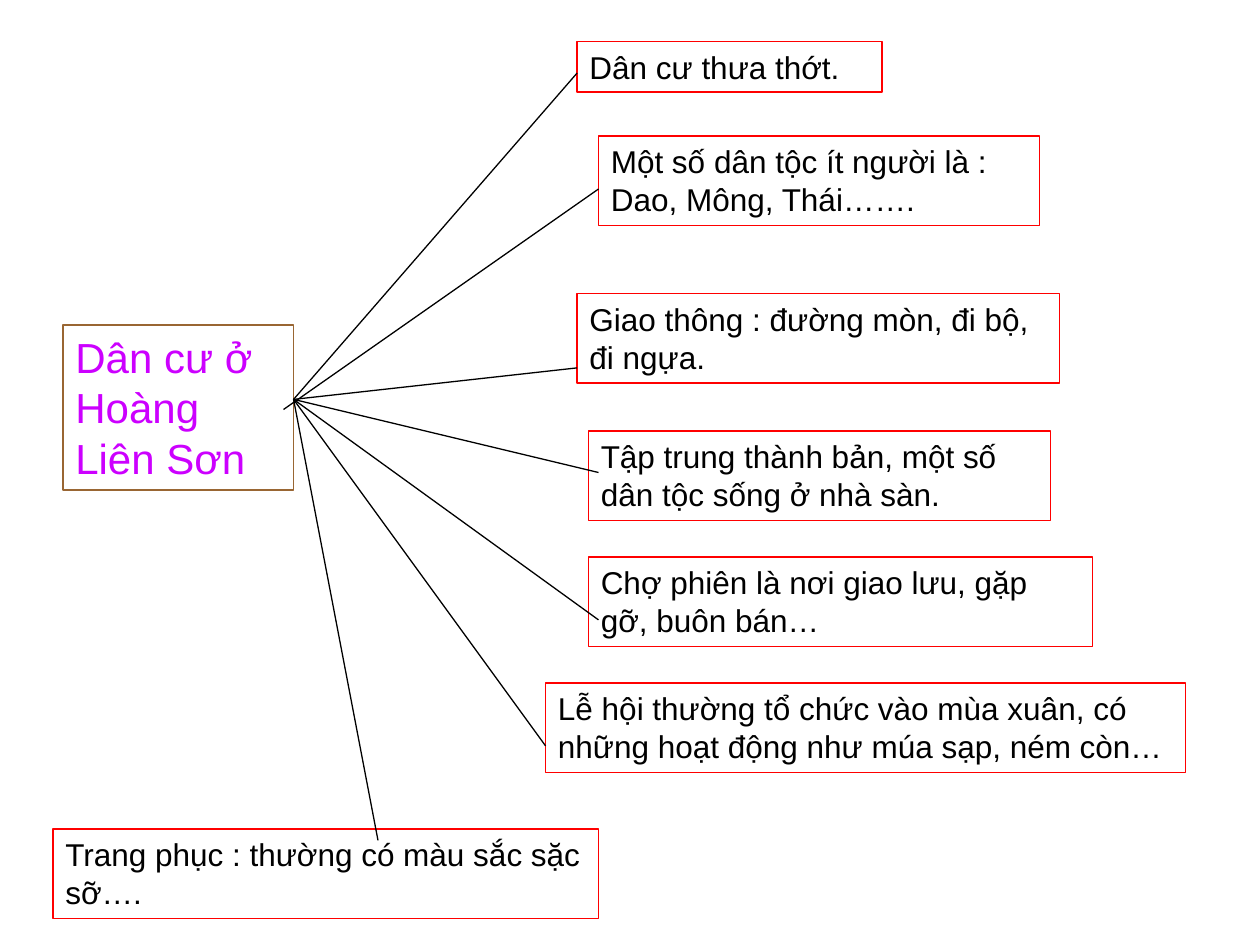
from dataclasses import dataclass

from lxml import etree
from pptx import Presentation
from pptx.dml.color import RGBColor
from pptx.enum.shapes import MSO_CONNECTOR
from pptx.enum.text import MSO_AUTO_SIZE
from pptx.oxml.ns import qn
from pptx.util import Inches, Pt

STRAIGHT = MSO_CONNECTOR.STRAIGHT
GROW_TO_TEXT = MSO_AUTO_SIZE.SHAPE_TO_FIT_TEXT


@dataclass(frozen=True)
class Theme:
    font: str = "Arial"
    topic_size: int = 24
    fact_size: int = 18
    line_width: float = 0.75
    topic_text: str = "CC00FF"
    topic_border: str = "996633"
    fact_text: str = "000000"
    fact_border: str = "FF0000"
    branch: str = "000000"
    paper: str = "FFFFFF"


class MindMap:
    """Draws bordered text boxes and branches on one slide."""

    def __init__(self, slide, theme):
        self.slide = slide
        self.theme = theme

    def _outline(self, line, color):
        line.color.rgb = RGBColor.from_string(color)
        line.width = Pt(self.theme.line_width)

    def _box(self, text, area, size, color, border):
        box = self.slide.shapes.add_textbox(*map(Inches, area))
        self._outline(box.line, border)
        frame = box.text_frame
        frame.word_wrap = True
        frame.auto_size = GROW_TO_TEXT
        frame.text = text
        font = frame.paragraphs[0].runs[0].font
        font.name = self.theme.font
        font.size = Pt(size)
        font.color.rgb = RGBColor.from_string(color)
        return box

    def topic(self, text, area):
        theme = self.theme
        return self._box(text, area, theme.topic_size, theme.topic_text, theme.topic_border)

    def fact(self, text, area):
        theme = self.theme
        return self._box(text, area, theme.fact_size, theme.fact_text, theme.fact_border)

    def fill(self, box):
        box.fill.solid()
        box.fill.fore_color.rgb = RGBColor.from_string(self.theme.paper)

    def branch(self, start, end):
        line = self.slide.shapes.add_connector(STRAIGHT, *map(Inches, (*start, *end)))
        self._outline(line.line, self.theme.branch)
        etree.SubElement(line._element.spPr, qn("a:effectLst"))


HUB = (2.33, 3.17)
ONE_LINE, TWO_LINES = 0.4, 0.71

# Text, box (left, top, width, height), branch start, branch end
FACTS = [
    ("Dân cư thưa thớt.", (4.58, 0.33, 2.42, ONE_LINE), HUB, (4.58, 0.58)),
    ("Một số dân tộc ít người là : Dao, Mông, Thái…….",
     (4.75, 1.08, 3.5, TWO_LINES), (2.25, 3.25), (4.75, 1.5)),
    ("Giao thông : đường mòn, đi bộ, đi ngựa.",
     (4.58, 2.33, 3.83, TWO_LINES), HUB, (4.58, 2.92)),
    ("Tập trung thành bản, một số dân tộc sống ở nhà sàn.",
     (4.67, 3.42, 3.67, TWO_LINES), HUB, (4.75, 3.75)),
    ("Chợ phiên là nơi giao lưu, gặp gỡ, buôn bán…",
     (4.67, 4.42, 4, TWO_LINES), HUB, (4.75, 4.92)),
    ("Lễ hội thường tổ chức vào mùa xuân, có những hoạt động như múa sạp, ném còn…",
     (4.33, 5.42, 5.08, TWO_LINES), HUB, (4.33, 5.92)),
    ("Trang phục : thường có màu sắc sặc sỡ….",
     (0.42, 6.58, 4.33, TWO_LINES), HUB, (3, 6.67)),
]


def main():
    deck = Presentation()
    deck.slide_width, deck.slide_height = Inches(10), Inches(7.5)
    page = MindMap(deck.slides.add_slide(deck.slide_layouts[6]), Theme())

    page.topic("Dân cư ở Hoàng Liên Sơn", (0.5, 2.58, 1.83, 1.31))
    boxes = [page.fact(text, area) for text, area, _, _ in FACTS]
    page.fill(boxes[0])
    for _, _, start, end in FACTS:
        page.branch(start, end)

    deck.save("out.pptx")


if __name__ == "__main__":
    main()
